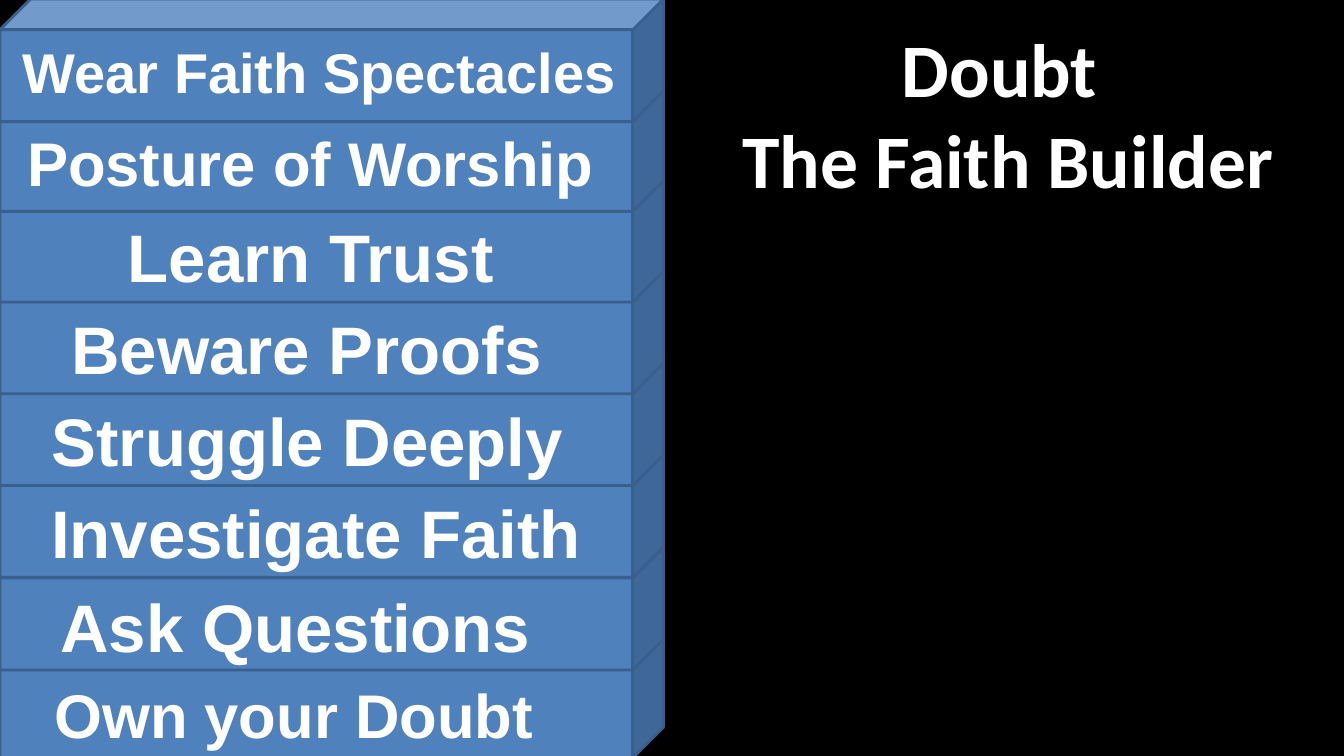
from dataclasses import dataclass

from pptx import Presentation
from pptx.dml.color import RGBColor
from pptx.enum import shapes, text
from pptx.util import Pt


@dataclass(frozen=True)
class Theme:
    back: RGBColor = RGBColor(0, 0, 0)
    ink: RGBColor = RGBColor(255, 255, 255)
    block: RGBColor = RGBColor(0x4F, 0x81, 0xBD)
    edge: RGBColor = RGBColor(0x3A, 0x5F, 0x8C)
    label: str = "Arial"
    head: str = "Calibri"
    small: int = 40
    mid: int = 44
    large: int = 48
    title: int = 54


@dataclass(frozen=True)
class Box:
    left: float
    top: float
    width: float
    height: float


@dataclass(frozen=True)
class Step:
    """A block of the tower; without a box its label sits on the block itself."""
    label: str
    top: float
    size: int
    box: Box | None = None
    center: bool = True


THEME = Theme()
WIDE, HIGH = 960, 540
BLOCK_W, BLOCK_H = 474, 87.6

# From the bottom of the tower to the top, so each block overlaps the one below
STEPS = [
    Step("Own your Doubt", 453.6, THEME.mid, Box(6, 480, 408, 60.6)),
    Step("Ask Questions", 391, THEME.large, Box(36, 414.6, 366, 65.4), False),
    Step("Investigate Faith", 324.7, THEME.large),
    Step("Struggle Deeply", 259.2, THEME.large, Box(30, 282, 402, 65.4), False),
    Step("Beware Proofs", 193.7, THEME.large, Box(30, 216, 378, 65.4)),
    Step("Learn Trust", 128.2, THEME.large, Box(42, 150, 360, 65.4)),
    Step("Posture of Worship", 63.4, THEME.mid, Box(-12, 85.8, 468, 60.6)),
    Step("Wear Faith Spectacles", -0.7, THEME.small, Box(0, 23, 456, 55.4)),
]


def place(box: Box) -> list[Pt]:
    return [Pt(n) for n in (box.left, box.top, box.width, box.height)]


def write(frame, words: str, *, size: int, font: str = THEME.label,
          center: bool = True) -> None:
    """Fill a text frame with bold text, one paragraph per line of words."""
    frame.word_wrap = True
    frame.text = words
    for para in frame.paragraphs:
        para.alignment = text.PP_ALIGN.CENTER if center else text.PP_ALIGN.LEFT
        for run in para.runs:
            run.font.name = font
            run.font.size = Pt(size)
            run.font.bold = True
            run.font.color.rgb = THEME.ink


def add_text(slide, box: Box, words: str, **form) -> None:
    frame = slide.shapes.add_textbox(*place(box)).text_frame
    write(frame, words, **form)
    frame.auto_size = text.MSO_AUTO_SIZE.SHAPE_TO_FIT_TEXT


def add_step(slide, step: Step) -> None:
    cube = slide.shapes.add_shape(
        shapes.MSO_SHAPE.CUBE, *place(Box(0, step.top, BLOCK_W, BLOCK_H)))
    cube.shadow.inherit = False
    cube.fill.solid()
    cube.fill.fore_color.rgb = THEME.block
    cube.line.color.rgb = THEME.edge
    cube.line.width = Pt(2)
    if step.box:
        add_text(slide, step.box, step.label, size=step.size, center=step.center)
    else:
        cube.text_frame.vertical_anchor = text.MSO_ANCHOR.MIDDLE
        write(cube.text_frame, step.label, size=step.size)


def main() -> None:
    deck = Presentation()
    deck.slide_width, deck.slide_height = Pt(WIDE), Pt(HIGH)
    slide = deck.slides.add_slide(deck.slide_layouts[6])
    slide.background.fill.solid()
    slide.background.fill.fore_color.rgb = THEME.back
    for step in STEPS:
        add_step(slide, step)
    add_text(slide, Box(510, 12, 420, 138), "Doubt \nThe Faith Builder",
             size=THEME.title, font=THEME.head)
    deck.save("out.pptx")


if __name__ == "__main__":
    main()
